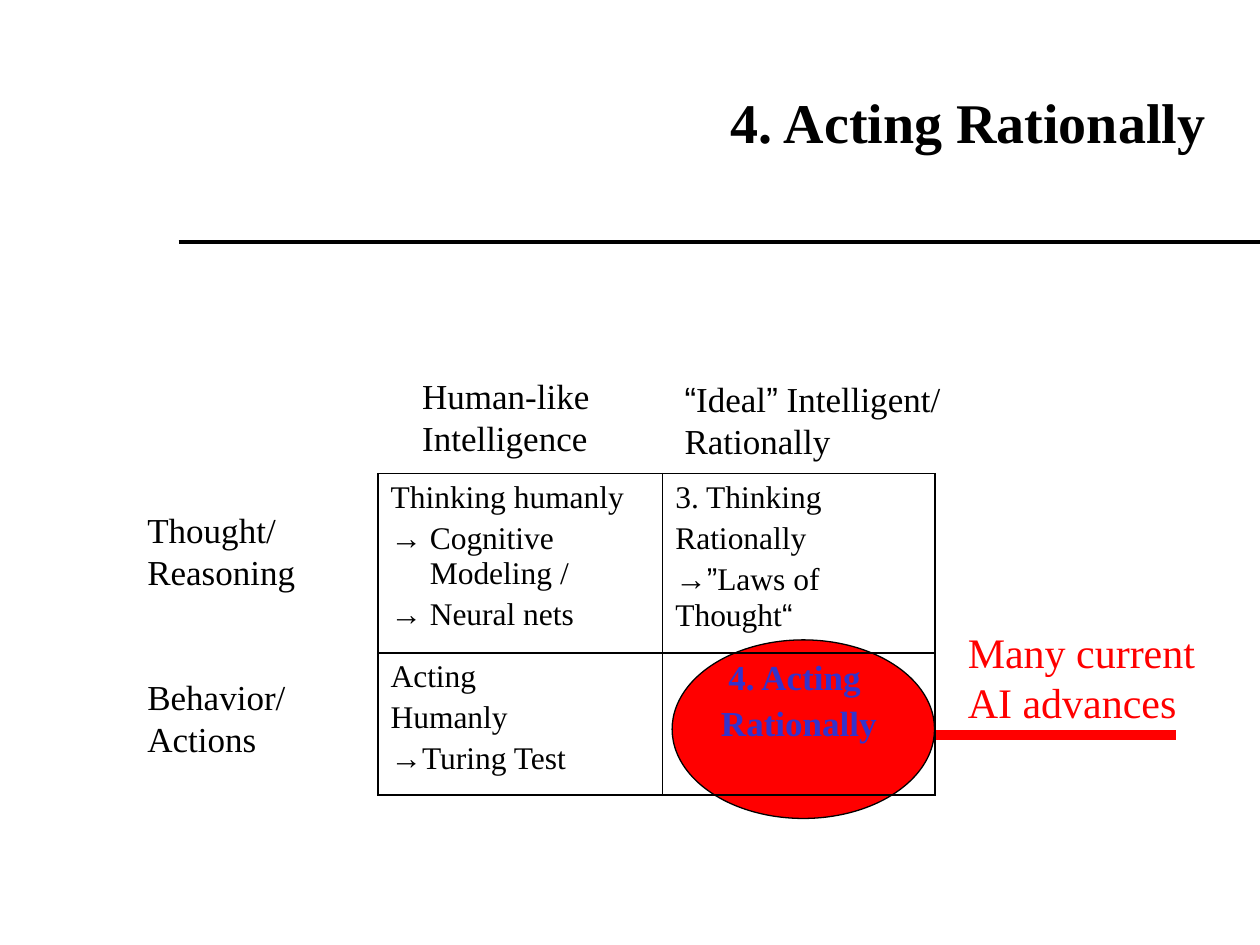
from itertools import groupby
from lxml.etree import SubElement
from pptx import Presentation
from pptx.dml.color import RGBColor
from pptx.enum.shapes import MSO_CONNECTOR, MSO_SHAPE
from pptx.enum.text import MSO_ANCHOR, PP_ALIGN
from pptx.oxml.ns import qn
from pptx.util import Cm, Pt

BLACK = RGBColor(0, 0, 0)
RED = RGBColor(255, 0, 0)
BLUE = RGBColor(0x33, 0x33, 0xCC)
SERIF, SANS = "Times New Roman", "Arial"
ARROW = "→ "


def bullet(para):
    props = para._p.get_or_add_pPr()
    props.set("marL", str(Cm(0.79)))
    props.set("indent", str(-Cm(0.79)))
    SubElement(props, qn("a:buFont"), typeface=SERIF)
    SubElement(props, qn("a:buChar"), char=ARROW.strip())


def write(frame, text, size=20, color=BLACK, bold=False, align=PP_ALIGN.LEFT, gap=0):
    for num, line in enumerate(text.split("\n")):
        para = frame.paragraphs[0] if num == 0 else frame.add_paragraph()
        para.alignment = align
        para.space_before = Pt(size * gap)
        if line.startswith(ARROW):
            bullet(para)
            line = line.removeprefix(ARROW)
        for quote, chars in groupby(line, lambda char: char in "“”"):
            run = para.add_run()
            run.text = "".join(chars)
            font = run.font
            font.name = SANS if quote else SERIF
            font.size, font.bold = Pt(size), bold
            font.color.rgb = color


class Deck:
    def __init__(self):
        self.show = Presentation()
        self.show.slide_width, self.show.slide_height = Cm(25.4), Cm(19.05)
        self.slide = self.show.slides.add_slide(self.show.slide_layouts[6])
        self.shapes = self.slide.shapes

    def line(self, left, right, top, width, color):
        line = self.shapes.add_connector(
            MSO_CONNECTOR.STRAIGHT, Cm(left), Cm(top), Cm(right), Cm(top))
        line.line.width, line.line.color.rgb = Pt(width), color
        SubElement(line._element.spPr, qn("a:effectLst"))

    def oval(self, left, top, width, height, color):
        oval = self.shapes.add_shape(
            MSO_SHAPE.OVAL, Cm(left), Cm(top), Cm(width), Cm(height))
        oval.shadow.inherit = False
        oval.fill.solid()
        oval.fill.fore_color.rgb = color
        oval.line.width, oval.line.color.rgb = Pt(0.75), BLACK

    def text(self, left, top, width, height, text, wrap=False,
             anchor=MSO_ANCHOR.TOP, **style):
        box = self.shapes.add_textbox(Cm(left), Cm(top), Cm(width), Cm(height))
        box.text_frame.word_wrap = wrap
        box.text_frame.vertical_anchor = anchor
        write(box.text_frame, text, **style)

    def border(self, cell):
        props = cell._tc.get_or_add_tcPr()
        for place, side in enumerate(("lnL", "lnR", "lnT", "lnB")):
            edge = props.makeelement(qn(f"a:{side}"), {"w": str(Pt(1))})
            fill = SubElement(edge, qn("a:solidFill"))
            SubElement(fill, qn("a:srgbClr"), val=str(BLACK))
            props.insert(place, edge)

    def table(self, left, top, cols, rows, cells):
        table = self.shapes.add_table(
            len(rows), len(cols), Cm(left), Cm(top), Cm(sum(cols)), Cm(sum(rows))).table
        table.first_row = table.horz_banding = False
        for col, width in zip(table.columns, cols):
            col.width = Cm(width)
        for row, height, texts in zip(table.rows, rows, cells):
            row.height = Cm(height)
            for cell, (text, style) in zip(row.cells, texts):
                cell.fill.background()
                self.border(cell)
                write(cell.text_frame, text, gap=0.2, **style)


def main():
    deck = Deck()
    deck.line(3.6, 25.4, 4.87, 2.25, BLACK)
    deck.oval(13.55, 12.9, 5.29, 3.6, RED)
    deck.line(18.84, 23.71, 14.82, 6, RED)
    deck.text(19.26, 12.5, 5.14, 2.31, "Many current\nAI advances", size=24, color=RED)
    deck.text(2.96, 0.85, 21.6, 3.18, "4. Acting Rationally", wrap=True,
              anchor=MSO_ANCHOR.MIDDLE, size=32, bold=True, align=PP_ALIGN.RIGHT)

    plain = dict(size=18)
    focus = dict(size=20, color=BLUE, bold=True, align=PP_ALIGN.CENTER)
    deck.table(7.62, 9.55, (5.74, 5.49), (3.61, 2.87), (
        (("Thinking humanly\n→ Cognitive Modeling /\n→ Neural nets", plain),
         ("3. Thinking\nRationally\n→”Laws of Thought“", plain)),
        (("Acting\nHumanly\n→Turing Test", plain),
         ("4. Acting \nRationally", focus)),
    ))

    for left, top, width, text in (
        (2.72, 10.13, 3.53, "Thought/\nReasoning"),
        (2.72, 13.49, 3.33, "Behavior/\nActions"),
        (8.26, 7.42, 3.89, "Human-like\nIntelligence"),
        (13.55, 7.49, 5.8, "“Ideal” Intelligent/\nRationally"),
    ):
        deck.text(left, top, width, 1.96, text)
    deck.show.save("out.pptx")


if __name__ == "__main__":
    main()
